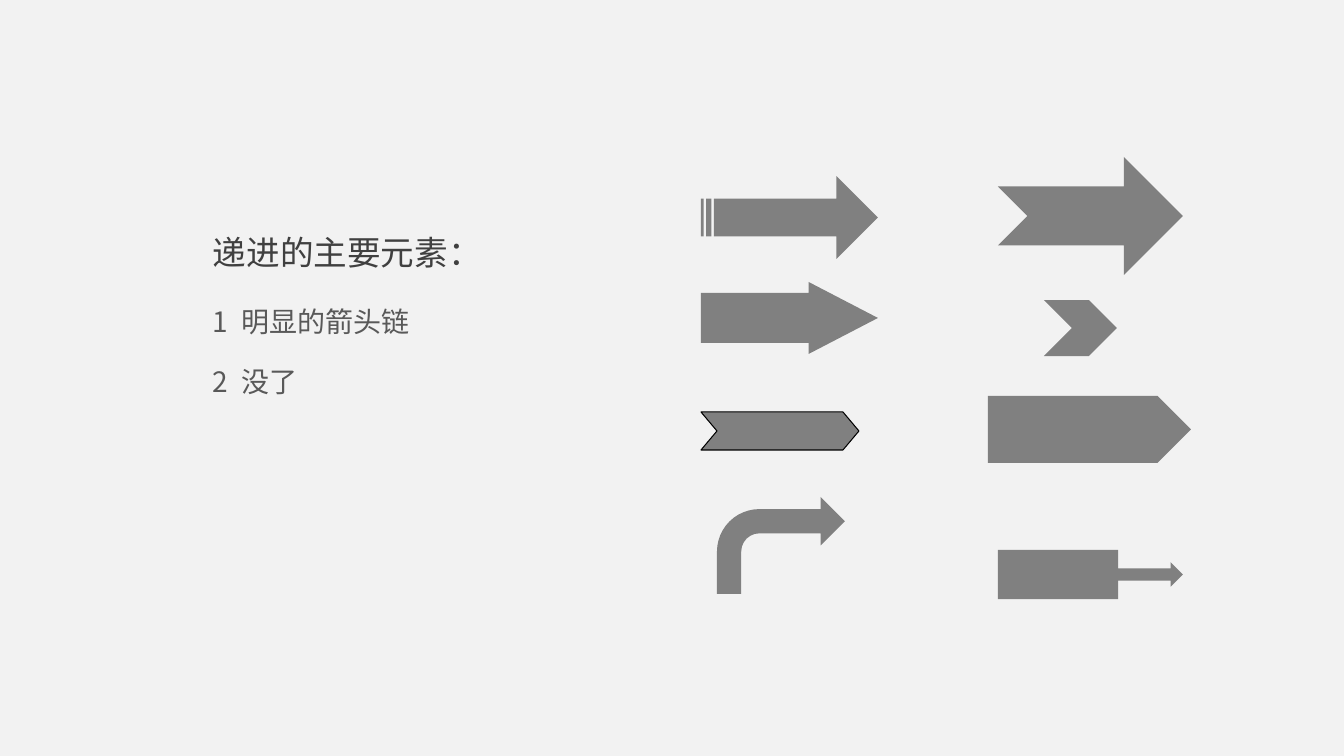
from dataclasses import dataclass

import lxml.etree
import pptx
import pptx.dml.color
import pptx.enum.shapes
import pptx.enum.text
import pptx.oxml.ns
import pptx.util

EMU_PER_PX = 914400 / 100.8
FONT = "Noto Sans CJK SC"
ARROW_FILL = "808080"
SHAPE = pptx.enum.shapes.MSO_SHAPE


@dataclass
class Arrow:
    preset: int
    left: int
    top: int
    width: int
    height: int
    adjustments: tuple[float, ...] = ()


@dataclass
class Line:
    text: str
    size: int
    color: str
    space_before: int = 0
    number: str = ""


ARROWS = [
    # Left column
    Arrow(SHAPE.RIGHT_ARROW, 701, 282, 177, 72, (0.695, 0.963)),
    Arrow(SHAPE.BENT_ARROW, 717, 497, 128, 97),
    Arrow(SHAPE.STRIPED_RIGHT_ARROW, 701, 176, 177, 83, (0.457, 0.5)),
    # Right column
    Arrow(SHAPE.NOTCHED_RIGHT_ARROW, 998, 157, 185, 118),
    Arrow(SHAPE.CHEVRON, 1044, 300, 73, 56),
    Arrow(SHAPE.PENTAGON, 988, 396, 203, 67),
    Arrow(SHAPE.RIGHT_ARROW_CALLOUT, 998, 550, 185, 49),
]

RIBBON_POINTS = [(843, 450), (701, 450), (717, 431), (701, 412), (843, 412), (859, 431)]

LINES = [
    Line("递进的主要元素：", 24, "404040"),
    Line("明显的箭头链", 20, "595959", 23, "1"),
    Line("没了", 20, "595959", 19, "2"),
]


def px(length: int) -> pptx.util.Emu:
    return pptx.util.Emu(round(length * EMU_PER_PX))


def rgb(color: str) -> pptx.dml.color.RGBColor:
    return pptx.dml.color.RGBColor.from_string(color)


def paint(shape) -> None:
    shape.shadow.inherit = False
    shape.fill.solid()
    shape.fill.fore_color.rgb = rgb(ARROW_FILL)
    shape.line.fill.background()


def add_arrow(shapes, arrow: Arrow) -> None:
    shape = shapes.add_shape(
        arrow.preset, px(arrow.left), px(arrow.top), px(arrow.width), px(arrow.height)
    )
    paint(shape)
    for index, value in enumerate(arrow.adjustments):
        shape.adjustments[index] = value


def add_ribbon(shapes, points: list[tuple[int, int]]) -> None:
    start, *others = points
    builder = shapes.build_freeform(*start, scale=EMU_PER_PX)
    builder.add_line_segments(others, close=True)
    ribbon = builder.convert_to_shape()
    paint(ribbon)
    ribbon.line.color.rgb = rgb("000000")
    ribbon.line.width = pptx.util.Pt(0.75)


def write_line(para, line: Line) -> None:
    para.space_before = pptx.util.Pt(line.space_before)
    para.font.size = pptx.util.Pt(line.size)
    para.font.color.rgb = rgb(line.color)
    para.font.name = FONT
    # East Asian typeface
    latin = next(para._p.iter(pptx.oxml.ns.qn("a:latin")))
    east_asian = lxml.etree.SubElement(latin.getparent(), pptx.oxml.ns.qn("a:ea"))
    east_asian.set("typeface", FONT)
    if line.number:
        para.add_run().text = line.number
        # Widened space between the number and its words
        gap = para.add_run()
        gap.text = " "
        gap._r.get_or_add_rPr().set("spc", "450")
    para.add_run().text = line.text


def add_text(shapes, lines: list[Line]) -> None:
    box = shapes.add_textbox(px(203), px(232), px(291), px(194))
    frame = box.text_frame
    frame.word_wrap = False
    frame.auto_size = pptx.enum.text.MSO_AUTO_SIZE.SHAPE_TO_FIT_TEXT
    frame.margin_top = 0
    for index, line in enumerate(lines):
        para = frame.add_paragraph() if index else frame.paragraphs[0]
        write_line(para, line)


def main() -> None:
    deck = pptx.Presentation()
    deck.slide_width, deck.slide_height = px(1344), px(756)
    page = deck.slides.add_slide(deck.slide_layouts[6])
    page.background.fill.solid()
    page.background.fill.fore_color.rgb = rgb("F2F2F2")

    add_text(page.shapes, LINES)

    # Arrow collection
    group = page.shapes.add_group_shape()
    add_ribbon(group.shapes, RIBBON_POINTS)
    for arrow in ARROWS:
        add_arrow(group.shapes, arrow)

    deck.save("out.pptx")


if __name__ == "__main__":
    main()
